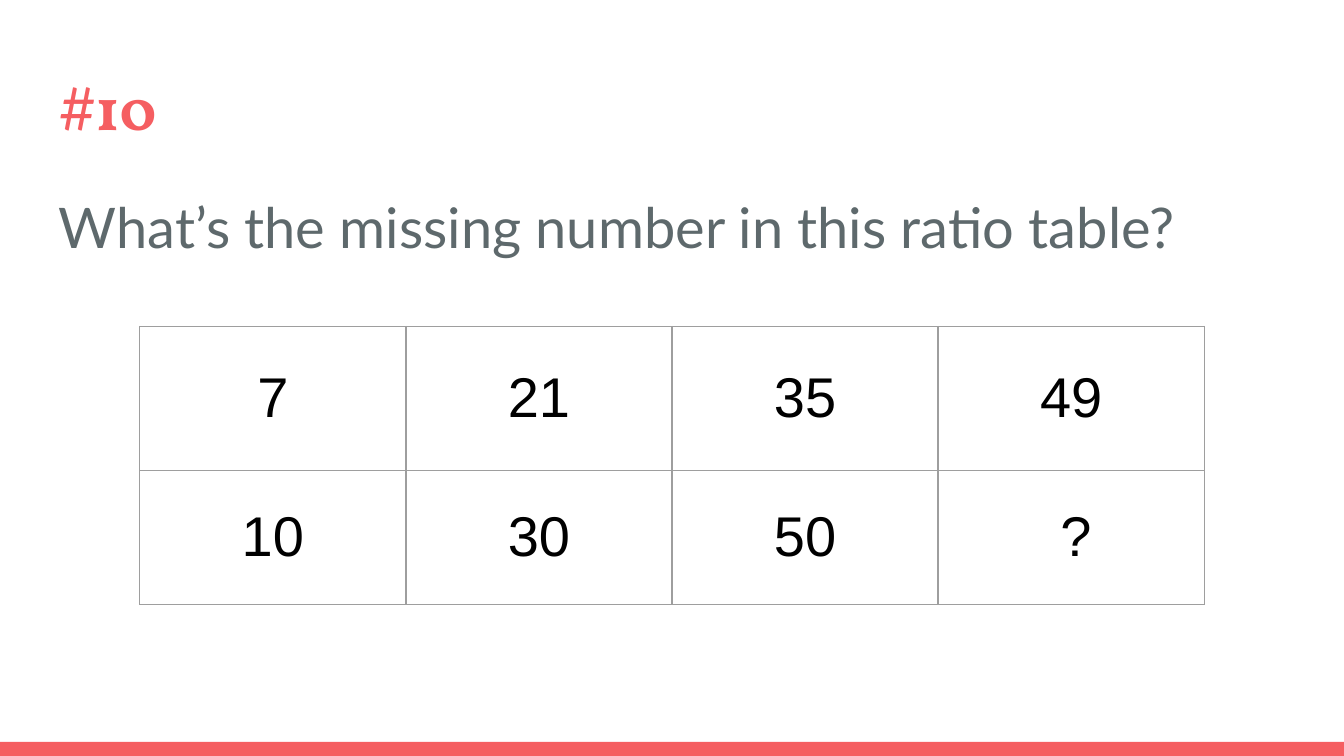
import pptx
import pptx.util
import pptx.dml.color
import pptx.enum.shapes
import pptx.enum.text
import pptx.oxml
import pptx.oxml.ns

Inches = pptx.util.Inches
Pt = pptx.util.Pt
ANCHOR = pptx.enum.text.MSO_ANCHOR
ALIGN = pptx.enum.text.PP_ALIGN

CORAL = "F55E61"
SLATE = "5E696C"
GREY = "9E9E9E"
BLACK = "000000"
INSET = Inches(0.1)
RATIOS = [["7", "21", "35", "49"], ["10", "30", "50", "?"]]


def rgb(value):
    return pptx.dml.color.RGBColor.from_string(value)


def write(tf, text, font, size, color, bold=False, align=ALIGN.LEFT):
    tf.text = text
    p = tf.paragraphs[0]
    p.alignment = align
    r = p.runs[0]
    r.font.name = font
    r.font.size = Pt(size)
    r.font.bold = bold
    r.font.color.rgb = rgb(color)
    return p


def set_frame(tf):
    tf.word_wrap = True
    tf.auto_size = pptx.enum.text.MSO_AUTO_SIZE.NONE
    tf.vertical_anchor = ANCHOR.TOP
    tf.margin_left = tf.margin_right = INSET
    tf.margin_top = tf.margin_bottom = INSET


def add_footer_bar(s):
    sp = s.shapes.add_shape(pptx.enum.shapes.MSO_SHAPE.RECTANGLE,
                            0, Inches(5.52), Inches(10), Inches(0.11))
    sp.shadow.inherit = False
    sp.fill.solid()
    sp.fill.fore_color.rgb = rgb(CORAL)
    sp.line.fill.background()


def add_title(s, text):
    sp = s.shapes.title
    sp.left, sp.top = Inches(0.34), Inches(0.43)
    sp.width, sp.height = Inches(9.32), Inches(0.68)
    set_frame(sp.text_frame)
    write(sp.text_frame, text, "Vollkorn", 32, CORAL, bold=True)


def add_question(s, text):
    sp = s.shapes.add_textbox(Inches(0.34), Inches(1.26), Inches(9.32), Inches(3.74))
    set_frame(sp.text_frame)
    p = write(sp.text_frame, text, "Lato", 30, SLATE)
    p.line_spacing = 1.15


def set_borders(cell, color, width):
    """Outline all four sides; borders must precede the fill in tcPr."""
    tcPr = cell._tc.get_or_add_tcPr()
    for i, side in enumerate(("lnL", "lnR", "lnT", "lnB")):
        tcPr.insert(i, pptx.oxml.parse_xml(
            f'<a:{side} {pptx.oxml.ns.nsdecls("a")} w="{Pt(width)}">'
            f'<a:solidFill><a:srgbClr val="{color}"/></a:solidFill></a:{side}>'))


def add_ratio_table(s, rows):
    table = s.shapes.add_table(len(rows), len(rows[0]), Inches(1.04), Inches(2.43),
                               Inches(7.92), Inches(2.07)).table
    table.first_row = table.horz_banding = False
    for row, height in zip(table.rows, (1.07, 1)):
        row.height = Inches(height)
    for i, values in enumerate(rows):
        for j, value in enumerate(values):
            cell = table.cell(i, j)
            cell.fill.background()
            cell.vertical_anchor = ANCHOR.MIDDLE
            cell.margin_left = cell.margin_right = INSET
            cell.margin_top = cell.margin_bottom = INSET
            write(cell.text_frame, value, "Arial", 30, BLACK, align=ALIGN.CENTER)
            set_borders(cell, GREY, 0.75)
    missing = table.cell(len(rows) - 1, len(rows[0]) - 1)
    missing.margin_left = Inches(0.91)
    missing.text_frame.paragraphs[0].alignment = ALIGN.LEFT


def main():
    prs = pptx.Presentation()
    prs.slide_width = Inches(10)
    prs.slide_height = prs.slide_width * 9 // 16
    s = prs.slides.add_slide(prs.slide_layouts.get_by_name("Title Only"))
    add_footer_bar(s)
    add_title(s, "#10")
    add_question(s, "What’s the missing number in this ratio table?")
    add_ratio_table(s, RATIOS)
    prs.save("out.pptx")


if __name__ == "__main__":
    main()
